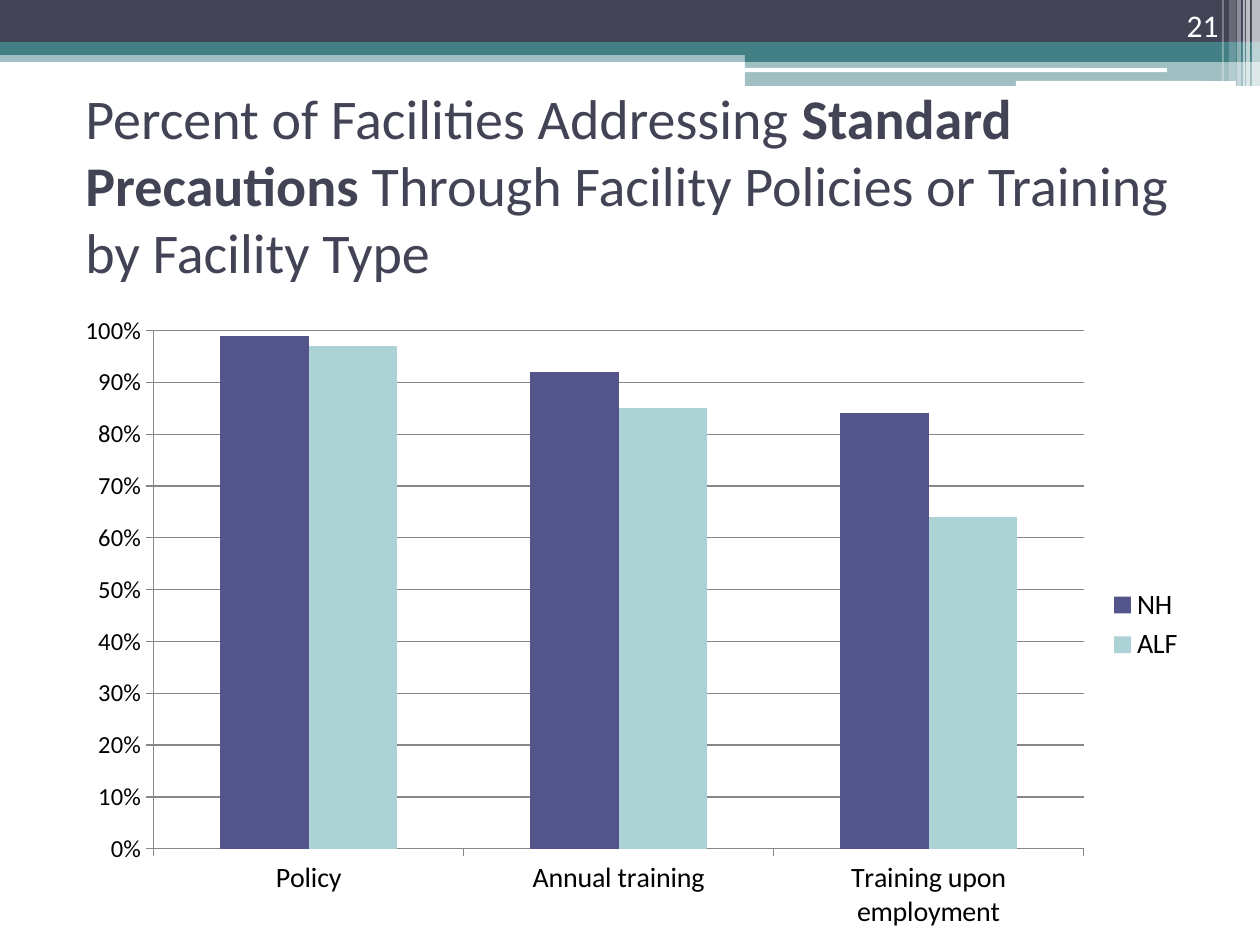
"""Build a slide comparing standard-precaution coverage by facility type."""
import pptx
import pptx.chart.data
import pptx.dml.color
import pptx.enum.chart
import pptx.enum.shapes
import pptx.enum.text
import pptx.oxml
import pptx.oxml.ns
import pptx.util

RGBColor = pptx.dml.color.RGBColor
SLATE = RGBColor(0x42, 0x44, 0x56)
TEAL = RGBColor(0x43, 0x80, 0x86)
WHITE = RGBColor(0xFF, 0xFF, 0xFF)
BLACK = RGBColor(0, 0, 0)
GRAY = RGBColor(0x86, 0x86, 0x86)
INDIGO = RGBColor(0x53, 0x54, 0x8A)
AQUA = RGBColor(0xAD, 0xD2, 0xD6)
FONT = "Calibri"
EMU_PER_PX = 914400 // 126

BANDS = [
    (0, 50, 1260, 12, TEAL, 50),
    (0, 0, 1260, 42, SLATE, 100),
    (0, 42, 1260, 13, TEAL, 100),
    (745, 49, 515, 13, TEAL, 100),
    (745, 61, 515, 25, TEAL, 50),
]
PILLS = [(745, 68, 422, 4), (1016, 81, 220, 5)]
STRIPES = [
    (1252, 8, 86, 65),
    (1246, 4, 86, 65),
    (1243, 2, 86, 60),
    (1237, 4, 86, 40),
    (1229, 7, 81, 20),
    (1222, 2, 81, 30),
]
TITLE = [
    ("Percent of Facilities Addressing ", False),
    ("Standard Precautions ", True),
    ("Through Facility Policies or Training by Facility Type", False),
]
CATEGORIES = ["Policy", "Annual training", "Training upon employment"]
SERIES = [
    ("NH", (0.99, 0.92, 0.84), INDIGO),
    ("ALF", (0.97, 0.85, 0.64), AQUA),
]


def px(*lengths):
    """Turn pixel lengths into EMU."""
    return [pptx.util.Emu(length * EMU_PER_PX) for length in lengths]


def add_block(page, left, top, width, height, color, opacity=100, rounded=False):
    """Add a borderless filled rectangle."""
    kinds = pptx.enum.shapes.MSO_SHAPE
    kind = kinds.ROUNDED_RECTANGLE if rounded else kinds.RECTANGLE
    block = page.shapes.add_shape(kind, *px(left, top, width, height))
    block.shadow.inherit = False
    block.line.fill.background()
    block.fill.solid()
    block.fill.fore_color.rgb = color
    if opacity < 100:
        tint = block.fill._xPr.find(".//" + pptx.oxml.ns.qn("a:srgbClr"))
        alpha = pptx.oxml.parse_xml(
            f'<a:alpha {pptx.oxml.ns.nsdecls("a")} val="{opacity * 1000}"/>')
        tint.append(alpha)


def add_text(page, frame, spans, size, color, anchor, align):
    """Add a text box with one paragraph of plain and bold spans."""
    box = page.shapes.add_textbox(*px(*frame))
    box.text_frame.word_wrap = True
    box.text_frame.vertical_anchor = anchor
    para = box.text_frame.paragraphs[0]
    para.alignment = align
    for text, bold in spans:
        span = para.add_run()
        span.text = text
        span.font.name = FONT
        span.font.size = pptx.util.Pt(size)
        span.font.bold = bold
        span.font.color.rgb = color


def style_font(font, size):
    """Apply the chart's typeface and color at a given size."""
    font.name = FONT
    font.size = pptx.util.Pt(size)
    font.color.rgb = BLACK


def set_plot_area(chart, left, top, width, height):
    """Fix the inner plot area as fractions of the chart."""
    layout = pptx.oxml.parse_xml(
        f'<c:layout {pptx.oxml.ns.nsdecls("c")}><c:manualLayout>'
        '<c:layoutTarget val="inner"/><c:xMode val="edge"/><c:yMode val="edge"/>'
        f'<c:x val="{left}"/><c:y val="{top}"/><c:w val="{width}"/><c:h val="{height}"/>'
        '</c:manualLayout></c:layout>')
    area = chart._chartSpace.chart.plotArea
    for old in area.findall(pptx.oxml.ns.qn("c:layout")):
        area.remove(old)
    area.insert(0, layout)


def add_column_chart(page, frame):
    """Add the clustered column chart of facility percentages."""
    enums = pptx.enum.chart
    data = pptx.chart.data.CategoryChartData(number_format="0%")
    data.categories = CATEGORIES
    for name, values, _ in SERIES:
        data.add_series(name, values)
    chart = page.shapes.add_chart(
        enums.XL_CHART_TYPE.COLUMN_CLUSTERED, *px(*frame), data).chart
    style_font(chart.font, 10)
    chart.has_title = False
    chart.has_legend = True
    chart.legend.position = enums.XL_LEGEND_POSITION.RIGHT
    chart.legend.include_in_layout = False
    style_font(chart.legend.font, 16)
    plot = chart.plots[0]
    plot.gap_width = 150
    plot.overlap = 0
    plot.vary_by_categories = False
    for series, (_, _, color) in zip(plot.series, SERIES):
        series.format.fill.solid()
        series.format.fill.fore_color.rgb = color
    for axis, size in ((chart.category_axis, 16), (chart.value_axis, 14)):
        style_font(axis.tick_labels.font, size)
        axis.major_tick_mark = enums.XL_TICK_MARK.OUTSIDE
        axis.format.line.color.rgb = GRAY
    scale = chart.value_axis
    scale.minimum_scale, scale.maximum_scale, scale.major_unit = 0, 1, 0.1
    scale.tick_labels.number_format = "0%"
    scale.tick_labels.number_format_is_linked = False
    scale.has_major_gridlines = True
    scale.major_gridlines.format.line.color.rgb = GRAY
    set_plot_area(chart, 0.08, 0.04, 0.82, 0.81)


def main():
    """Assemble and save the slide."""
    deck = pptx.Presentation()
    deck.slide_width, deck.slide_height = px(1260, 945)
    page = deck.slides.add_slide(deck.slide_layouts[6])
    for band in BANDS:
        add_block(page, *band)
    for pill in PILLS:
        add_block(page, *pill, WHITE, rounded=True)
    for left, width, height, opacity in STRIPES:
        add_block(page, left, 0, width, height, WHITE, opacity)
    anchors, aligns = pptx.enum.text.MSO_ANCHOR, pptx.enum.text.PP_ALIGN
    add_text(page, (73, 126, 1134, 116), TITLE, 32, SLATE, anchors.MIDDLE, aligns.LEFT)
    add_text(page, (1126, 0, 105, 50), [("21", False)], 18, WHITE,
             anchors.BOTTOM, aligns.RIGHT)
    add_column_chart(page, (63, 305, 1134, 640))
    deck.save("out.pptx")


if __name__ == "__main__":
    main()
